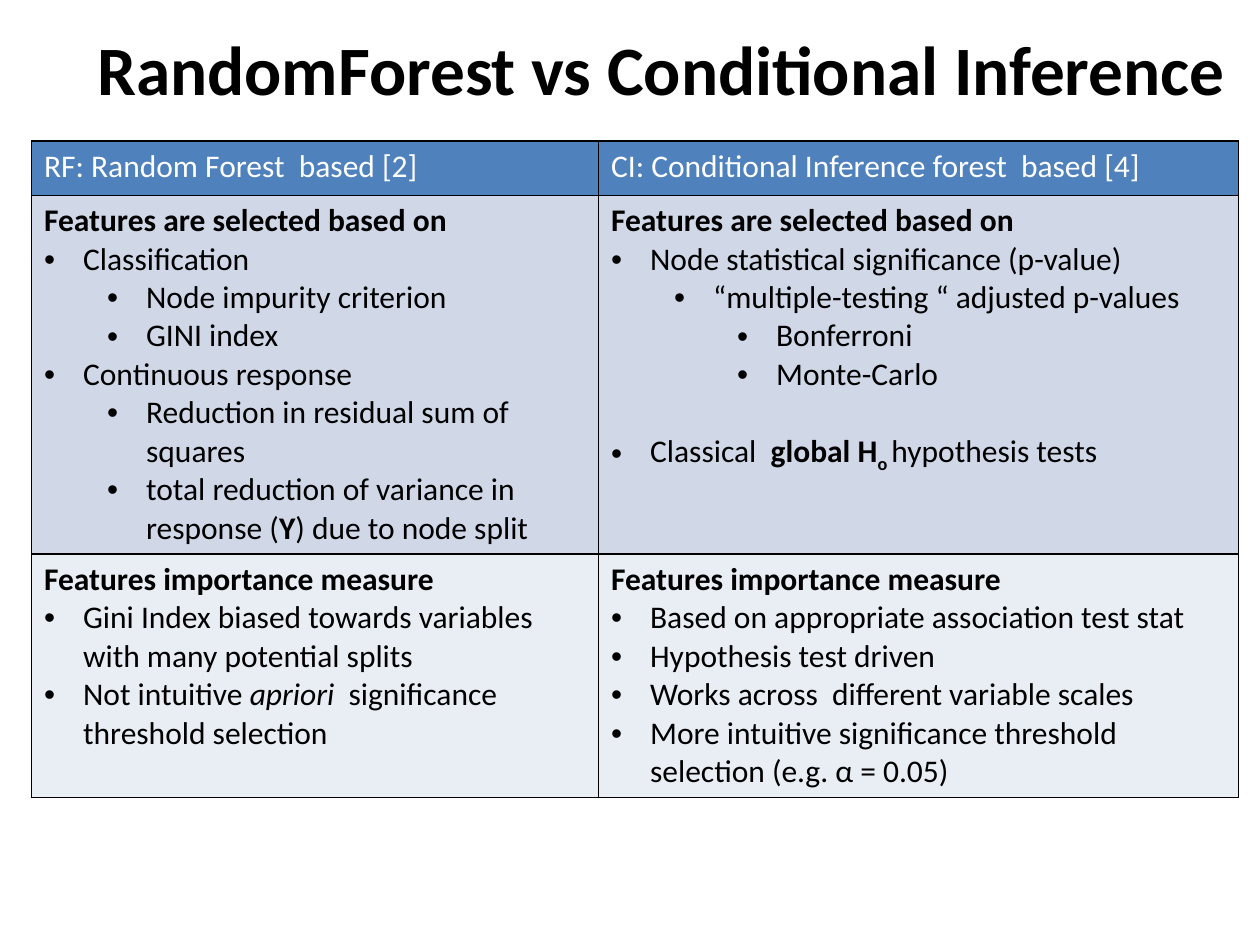
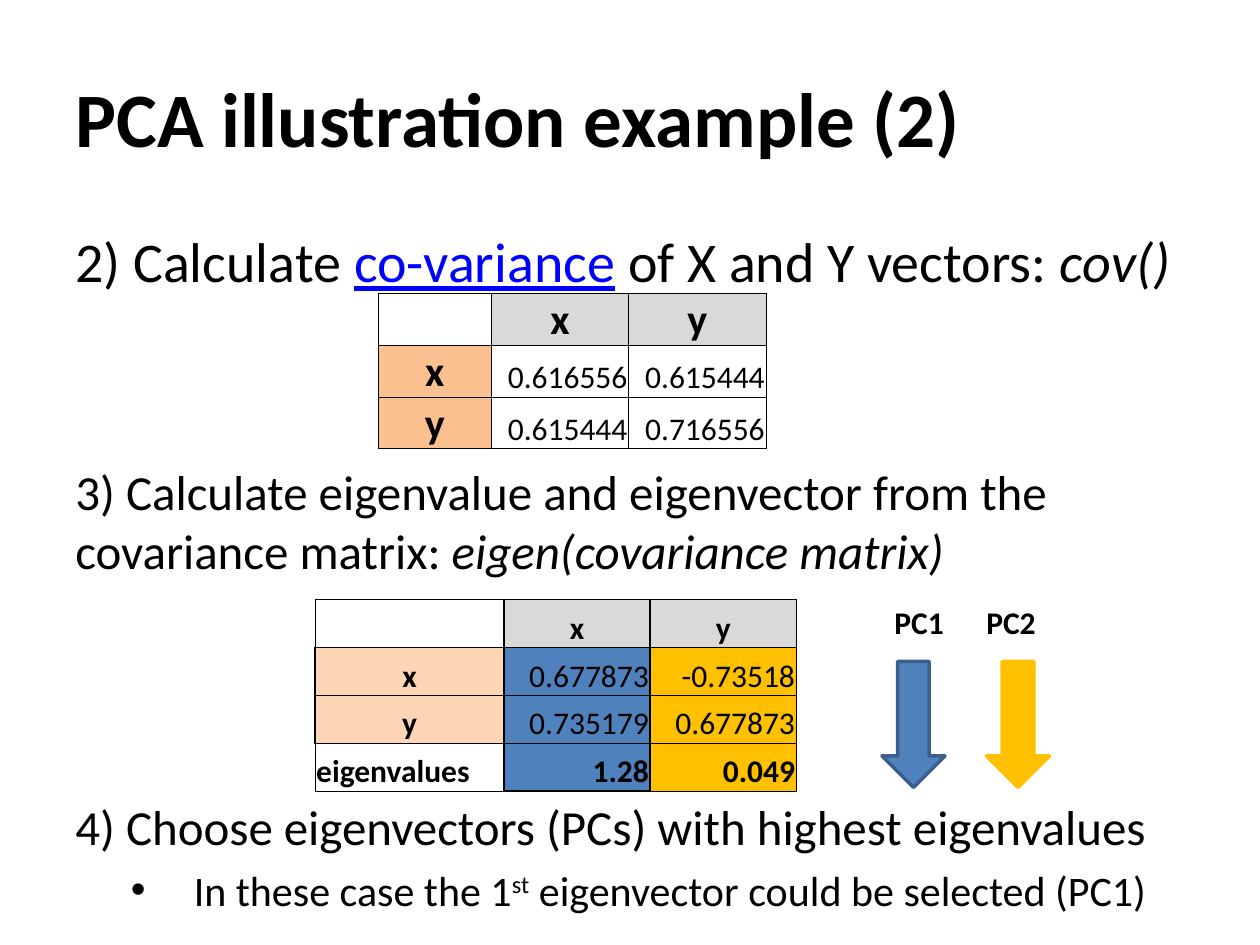
from dataclasses import dataclass, field

import pptx
import pptx.dml.color
import pptx.enum.shapes
import pptx.enum.text
import pptx.oxml.ns
import pptx.util
from lxml import etree

EMU_PER_PX = 9144  # 100 px to the inch
FONT = "Calibri"
TITLE_ONLY = 5
COLORS = {
    "text": "000000",
    "paper": "FFFFFF",
    "link": "0000FF",
    "blue": "4F81BD",
    "blue edge": "3A5F8C",
    "blue tint": "D0D8E8",
    "pale tint": "E9EDF4",
    "gray": "D9D9D9",
    "orange": "FAC090",
    "peach": "FCD5B4",
    "gold": "FFC000",
}
ALIGN = pptx.enum.text.PP_ALIGN
ANCHOR = pptx.enum.text.MSO_ANCHOR
Box = tuple[int, int, int, int]


@dataclass(frozen=True)
class Run:
    text: str
    bold: bool = False
    italic: bool = False
    underline: bool = False
    color: str = "text"
    baseline: int = 0


@dataclass(frozen=True)
class Para:
    """A paragraph; a hanging indent makes it a bullet."""
    runs: tuple[Run, ...]
    size: float = 18
    level: int = 0
    indent: int = 0
    hang: int = 0
    space_before: int = 0
    align: ALIGN = ALIGN.LEFT


@dataclass(frozen=True)
class Cell:
    paras: tuple[Para, ...] = ()
    fill: str | None = None


@dataclass(frozen=True)
class Grid:
    left: int
    top: int
    columns: list[int]
    rows: list[int]
    cells: list[list[Cell]]
    border: float = 1
    thin_sides: dict[tuple[int, int], str] = field(default_factory=dict)
    tight: bool = False


@dataclass(frozen=True)
class Component:
    label: str
    label_left: int
    arrow_left: int
    fill: str
    edge: str


def px(length: int) -> pptx.util.Emu:
    return pptx.util.Emu(length * EMU_PER_PX)


def rgb(name: str) -> pptx.dml.color.RGBColor:
    return pptx.dml.color.RGBColor.from_string(COLORS[name])


def write(frame, paras: tuple[Para, ...]) -> None:
    for number, para in enumerate(paras):
        paragraph = frame.add_paragraph() if number else frame.paragraphs[0]
        paragraph.alignment = para.align
        paragraph.level = para.level
        paragraph.space_before = pptx.util.Pt(para.space_before)
        props = paragraph._p.get_or_add_pPr()
        props.set("marL", str(px(para.indent)))
        props.set("indent", str(px(-para.hang)))
        if para.hang:
            etree.SubElement(props, pptx.oxml.ns.qn("a:buFont")).set("typeface", "Arial")
            etree.SubElement(props, pptx.oxml.ns.qn("a:buChar")).set("char", "•")
        for part in para.runs:
            run = paragraph.add_run()
            run.text = part.text
            font = run.font
            font.name, font.size = FONT, pptx.util.Pt(para.size)
            font.bold, font.italic = part.bold, part.italic
            font.underline = part.underline
            font.color.rgb = rgb(part.color)
            if part.baseline:
                run._r.get_or_add_rPr().set("baseline", str(part.baseline * 1000))


def add_titled_slide(deck, title: str, box: Box, size: float, align: ALIGN):
    slide = deck.slides.add_slide(deck.slide_layouts[TITLE_ONLY])
    heading = slide.shapes.title
    heading.left, heading.top, heading.width, heading.height = map(px, box)
    frame = heading.text_frame
    frame.auto_size = pptx.enum.text.MSO_AUTO_SIZE.NONE
    frame.vertical_anchor = ANCHOR.MIDDLE
    write(frame, (Para((Run(title, bold=True),), size, align=align),))
    return slide


def add_text(slide, box: Box, paras: tuple[Para, ...], wrap: bool = True) -> None:
    frame = slide.shapes.add_textbox(*map(px, box)).text_frame
    frame.word_wrap = wrap
    write(frame, paras)


def set_borders(cell, width: float, thin_sides: str) -> None:
    props = cell._tc.get_or_add_tcPr()
    for position, side in enumerate("LRTB"):
        points = 0.5 if side in thin_sides else width
        line = etree.Element(pptx.oxml.ns.qn(f"a:ln{side}"), w=str(pptx.util.Pt(points)))
        fill = etree.SubElement(line, pptx.oxml.ns.qn("a:solidFill"))
        etree.SubElement(fill, pptx.oxml.ns.qn("a:srgbClr"), val=COLORS["text"])
        props.insert(position, line)


def add_grid(slide, grid: Grid) -> None:
    box = (grid.left, grid.top, sum(grid.columns), sum(grid.rows))
    table = slide.shapes.add_table(len(grid.rows), len(grid.columns), *map(px, box)).table
    table.first_row = table.horz_banding = False
    for column, width in zip(table.columns, grid.columns):
        column.width = px(width)
    for row, height in zip(table.rows, grid.rows):
        row.height = px(height)
    for r, row_cells in enumerate(grid.cells):
        for c, content in enumerate(row_cells):
            cell = table.cell(r, c)
            if grid.tight:
                cell.margin_left = cell.margin_right = cell.margin_top = px(1)
                cell.margin_bottom = 0
                cell.vertical_anchor = ANCHOR.BOTTOM
            if content.fill:
                cell.fill.solid()
                cell.fill.fore_color.rgb = rgb(content.fill)
            else:
                cell.fill.background()
            set_borders(cell, grid.border, grid.thin_sides.get((r, c), ""))
            write(cell.text_frame, content.paras)


def add_component(slide, component: Component) -> None:
    arrow = slide.shapes.add_shape(
        pptx.enum.shapes.MSO_SHAPE.DOWN_ARROW,
        *map(px, (component.arrow_left, 525, 50, 100)))
    arrow.shadow.inherit = False
    arrow.fill.solid()
    arrow.fill.fore_color.rgb = rgb(component.fill)
    arrow.line.color.rgb = rgb(component.edge)
    arrow.line.width = pptx.util.Pt(2)
    add_text(slide, (component.label_left, 474, 60, 40),
             (Para((Run(component.label, bold=True),)),), wrap=False)


def lead(text: str) -> Para:
    return Para((Run(text, bold=True),))


def bullet(*parts: str | Run, level: int = 0, space_before: int = 0) -> Para:
    runs = tuple(Run(part) if isinstance(part, str) else part for part in parts)
    return Para(runs, level=level, indent=31 + 50 * level, hang=31,
                space_before=space_before)


def entry(text: str, fill: str | None = None, size: float = 18, bold: bool = False,
          align: ALIGN = ALIGN.RIGHT) -> Cell:
    return Cell((Para((Run(text, bold=bold),), size, align=align),), fill)


def label(text: str, fill: str, size: float = 18) -> Cell:
    return entry(text, fill, size, bold=True, align=ALIGN.CENTER)


def build_comparison(deck) -> None:
    slide = add_titled_slide(deck, "RandomForest vs Conditional Inference",
                             (50, 8, 950, 92), 39.6, ALIGN.CENTER)
    headers = ("RF: Random Forest  based [2]", "CI: Conditional Inference forest  based [4]")
    selection = lead("Features are selected based on")
    importance = lead("Features importance measure")
    forest_selection = (
        selection,
        bullet("Classification"),
        bullet("Node impurity criterion", level=1),
        bullet("GINI index", level=1),
        bullet("Continuous response"),
        bullet("Reduction in residual sum of squares", level=1),
        bullet("total reduction of variance in response (", Run("Y", bold=True),
               ") due to node split", level=1),
    )
    inference_selection = (
        selection,
        bullet("Node statistical significance (p-value)"),
        bullet("“multiple-testing “ adjusted p-values", level=1),
        bullet("Bonferroni", level=2),
        bullet("Monte-Carlo", level=2),
        bullet("Classical  ", Run("global H", bold=True),
               Run("o ", bold=True, baseline=-25), "hypothesis tests", space_before=22),
    )
    forest_importance = (
        importance,
        bullet("Gini Index biased towards variables with many potential splits"),
        bullet("Not intuitive ", Run("apriori", italic=True),
               "  significance threshold selection"),
    )
    inference_importance = (
        importance,
        bullet("Based on appropriate association test stat"),
        bullet("Hypothesis test driven"),
        bullet("Works across  different variable scales"),
        bullet("More intuitive significance threshold selection (e.g. α = 0.05)"),
    )
    add_grid(slide, Grid(25, 112, [450, 508], [43, 284, 192], [
        [Cell((Para((Run(text, color="paper"),)),), "blue") for text in headers],
        [Cell(paras, "blue tint") for paras in (forest_selection, inference_selection)],
        [Cell(paras, "pale tint") for paras in (forest_importance, inference_importance)],
    ]))


def build_pca(deck) -> None:
    slide = add_titled_slide(deck, "PCA illustration example (2)",
                             (50, 30, 900, 125), 44, ALIGN.LEFT)
    add_text(slide, (50, 175, 950, 575), (
        Para((Run("2) Calculate "), Run("co-variance", underline=True, color="link"),
              Run(" of X and Y vectors: "), Run("cov()", italic=True)), 32),
        Para((Run("3) Calculate eigenvalue and eigenvector from the covariance matrix: "),
              Run("eigen(covariance matrix)", italic=True)), 28, level=1, space_before=96),
        Para((Run("4) Choose eigenvectors (PCs) with highest eigenvalues"),),
             28, level=1, space_before=124),
        Para((Run("In these case the 1"), Run("st", baseline=30),
              Run(" eigenvector could be selected (PC1)")),
             24, level=2, indent=94, hang=50, space_before=5),
    ))

    covariance = {"x": ("0.616556", "0.615444"), "y": ("0.615444", "0.716556")}
    add_grid(slide, Grid(
        300, 233, [90, 109, 109], [39] * 3,
        [[Cell()] + [label(axis, "gray", 24) for axis in covariance]]
        + [[label(axis, "orange", 24)] + [entry(value) for value in values]
           for axis, values in covariance.items()],
        border=0.5, tight=True))

    eigenvectors = {"x": ("0.677873", "-0.73518"), "y": ("0.735179", "0.677873")}
    eigenvalues = ("1.28", "0.049")
    fills = ("blue", "gold")
    add_grid(slide, Grid(
        250, 476, [150, 116, 116], [38] * 4,
        [[Cell()] + [label(axis, "gray") for axis in eigenvectors]]
        + [[label(axis, "peach")] + [entry(value, fill) for value, fill in zip(values, fills)]
           for axis, values in eigenvectors.items()]
        + [[entry("eigenvalues", bold=True, align=ALIGN.LEFT)]
           + [entry(value, fill, bold=True) for value, fill in zip(eigenvalues, fills)]],
        thin_sides={(0, 0): "LT", (1, 0): "B", (2, 0): "T", (3, 0): "LB",
                    (1, 2): "RB", (2, 2): "TRB", (3, 2): "TRB"},
        tight=True))

    for component in (Component("PC1", 700, 700, "blue", "blue edge"),
                      Component("PC2", 773, 783, "gold", "gold")):
        add_component(slide, component)


def main() -> None:
    deck = pptx.Presentation()
    deck.slide_width, deck.slide_height = px(1000), px(750)
    build_comparison(deck)
    build_pca(deck)
    deck.save("out.pptx")


if __name__ == "__main__":
    main()
